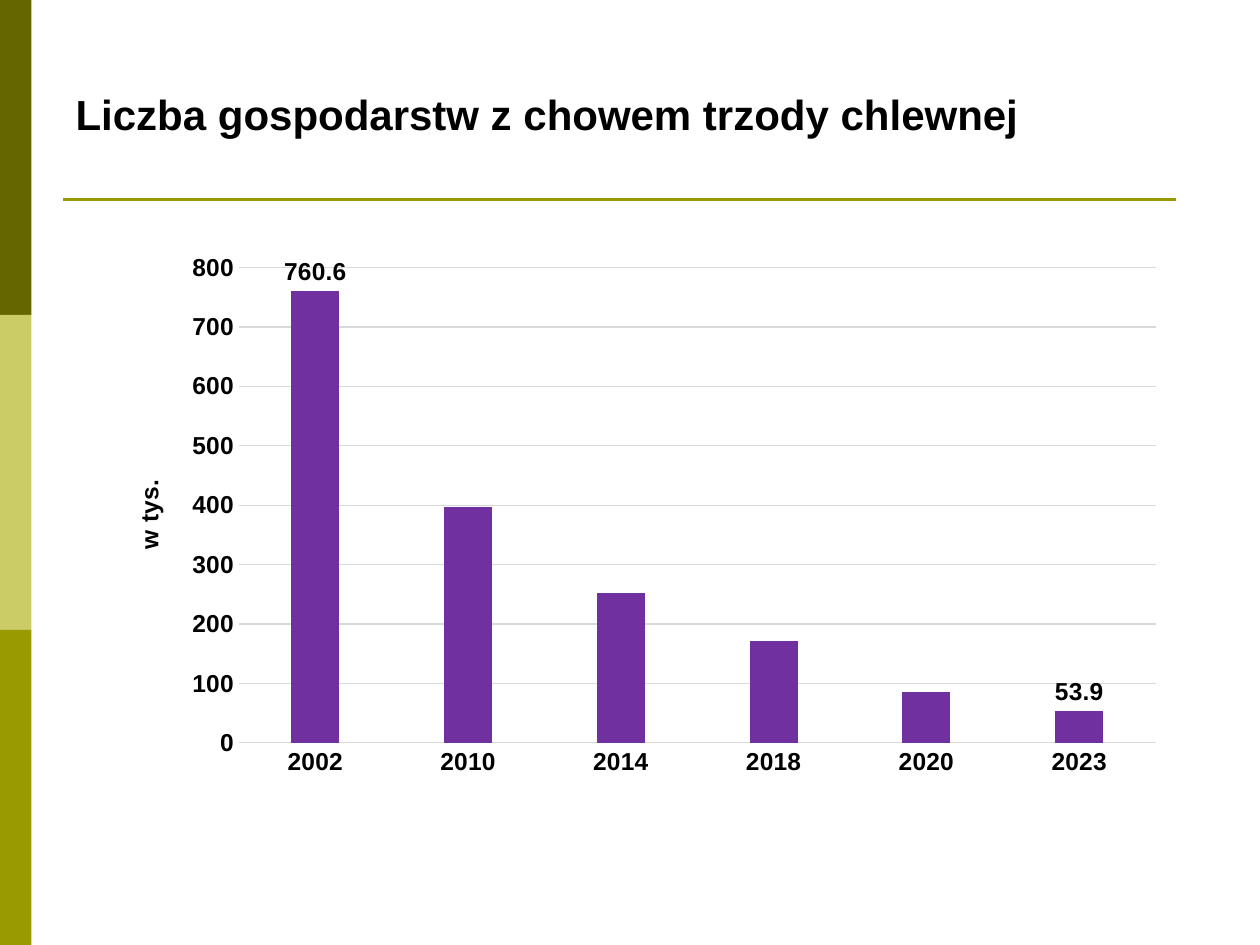
import pptx
import pptx.util
import pptx.chart.data
import pptx.dml.color
import pptx.enum.chart
import pptx.enum.shapes
import pptx.enum.text
import pptx.oxml.ns
from lxml import etree

Pt = pptx.util.Pt
RGB = pptx.dml.color.RGBColor
qn = pptx.oxml.ns.qn

BLACK = RGB(0x00, 0x00, 0x00)
OLIVE = RGB(0x99, 0x99, 0x00)
DARK = RGB(0x66, 0x66, 0x00)
PALE = RGB(0xCC, 0xCC, 0x66)
GRAY = RGB(0xD9, 0xD9, 0xD9)
PURPLE = RGB(0x70, 0x30, 0xA0)

TITLE = "Liczba gospodarstw z chowem trzody chlewnej"
UNIT = "w tys."
DATA = {"2002": 760.6, "2010": 397.7, "2014": 252.5,
        "2018": 172.2, "2020": 85.1, "2023": 53.9}
LABELED = ("2002", "2023")
BANDS = (DARK, PALE, OLIVE)
WIDE, HIGH = 720, 540
BAND = 18
PLOT = {"x": 0.125, "y": 0.038, "w": 0.856, "h": 0.799}
HEAD = {"name": "Arial", "size": Pt(24), "bold": True}
TEXT = {"name": "Arial", "size": Pt(14), "bold": True}


def style(font, look):
    for key, val in look.items():
        setattr(font, key, val)
    font.color.rgb = BLACK


def place_plot(chart):
    """Pin the inner plot area to fixed fractions of the chart."""
    area = chart.element.find(".//" + qn("c:plotArea"))
    for old in area.findall(qn("c:layout")):
        area.remove(old)
    layout = etree.Element(qn("c:layout"))
    area.insert(0, layout)
    manual = etree.SubElement(layout, qn("c:manualLayout"))
    parts = {"layoutTarget": "inner", "xMode": "edge", "yMode": "edge", **PLOT}
    for tag, val in parts.items():
        etree.SubElement(manual, qn("c:" + tag)).set("val", str(val))


def add_bands(slide):
    step = HIGH / len(BANDS)
    for i, color in enumerate(BANDS):
        band = slide.shapes.add_shape(
            pptx.enum.shapes.MSO_SHAPE.RECTANGLE,
            Pt(0), Pt(i * step), Pt(BAND), Pt(step))
        band.shadow.inherit = False
        band.fill.solid()
        band.fill.fore_color.rgb = color
        band.line.fill.background()


def add_rule(slide):
    rule = slide.shapes.add_connector(
        pptx.enum.shapes.MSO_CONNECTOR.STRAIGHT,
        Pt(36), Pt(114), Pt(672), Pt(114))
    rule.line.color.rgb = OLIVE
    rule.line.width = Pt(1.5)
    etree.SubElement(rule.element.spPr, qn("a:effectLst"))


def set_title(slide):
    title = slide.shapes.title
    title.left, title.top = Pt(36), Pt(21.6)
    title.width, title.height = Pt(648), Pt(61.2)
    frame = title.text_frame
    frame.text = TITLE
    frame.auto_size = pptx.enum.text.MSO_AUTO_SIZE.NONE
    frame.vertical_anchor = pptx.enum.text.MSO_ANCHOR.BOTTOM
    line = frame.paragraphs[0]
    line.alignment = pptx.enum.text.PP_ALIGN.LEFT
    style(line.runs[0].font, HEAD)


def set_axes(chart):
    none = pptx.enum.chart.XL_TICK_MARK.NONE
    cat, val = chart.category_axis, chart.value_axis
    for axis in (cat, val):
        axis.major_tick_mark = axis.minor_tick_mark = none
        style(axis.tick_labels.font, TEXT)
    val.minimum_scale, val.maximum_scale, val.major_unit = 0, 800, 100
    val.tick_labels.number_format = "0"
    val.tick_labels.number_format_is_linked = False
    val.format.line.fill.background()
    for line in (cat.format.line, val.major_gridlines.format.line):
        line.color.rgb = GRAY
        line.width = Pt(0.75)
    frame = val.axis_title.text_frame
    frame.text = UNIT
    style(frame.paragraphs[0].runs[0].font, TEXT)
    body = val.axis_title.element.find(".//" + qn("a:bodyPr"))
    body.set("rot", "-5400000")
    body.set("vert", "horz")


def add_chart(slide):
    data = pptx.chart.data.CategoryChartData(number_format="0.0")
    data.categories = list(DATA)
    data.add_series("Gospodarstwa", list(DATA.values()))
    chart = slide.shapes.add_chart(
        pptx.enum.chart.XL_CHART_TYPE.COLUMN_CLUSTERED,
        Pt(60), Pt(140), Pt(612), Pt(340), data).chart
    chart.has_legend = chart.has_title = False
    style(chart.font, TEXT)
    set_axes(chart)
    plot = chart.plots[0]
    plot.vary_by_categories = False
    plot.gap_width, plot.overlap = 219, -27
    bars = plot.series[0]
    bars.format.fill.solid()
    bars.format.fill.fore_color.rgb = PURPLE
    bars.data_labels.show_value = False
    for i, year in enumerate(DATA):
        if year in LABELED:
            label = bars.points[i].data_label
            style(label.font, TEXT)
            label.position = pptx.enum.chart.XL_LABEL_POSITION.OUTSIDE_END
    place_plot(chart)


def main():
    deck = pptx.Presentation()
    deck.slide_width, deck.slide_height = Pt(WIDE), Pt(HIGH)
    slide = deck.slides.add_slide(deck.slide_layouts.get_by_name("Title Only"))
    add_bands(slide)
    add_rule(slide)
    set_title(slide)
    add_chart(slide)
    deck.save("out.pptx")


if __name__ == "__main__":
    main()
